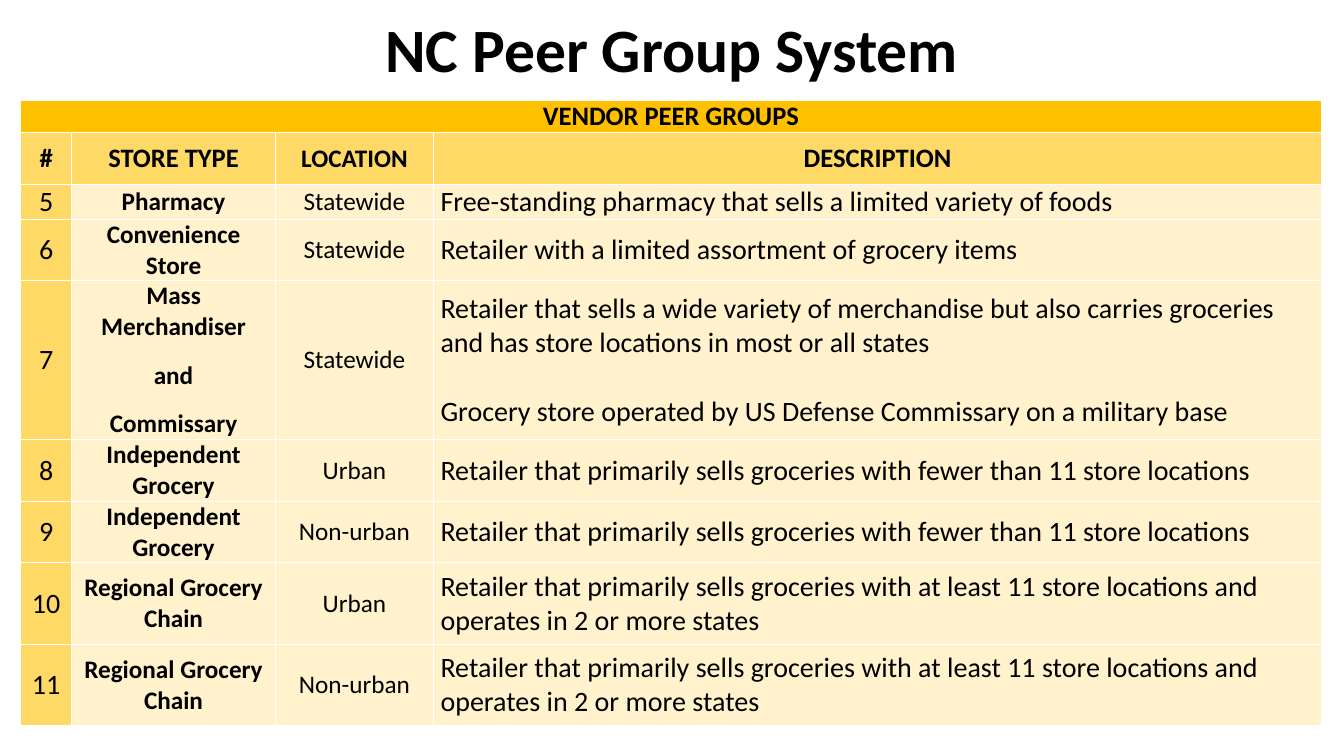
from typing import NamedTuple

from pptx import Presentation
from pptx.dml.color import RGBColor
from pptx.enum.text import MSO_ANCHOR, MSO_AUTO_SIZE, PP_ALIGN
from pptx.slide import Slide
from pptx.table import Table, _Cell
from pptx.text.text import TextFrame
from pptx.util import Pt

FONT = "Calibri"
BLACK = RGBColor(0x00, 0x00, 0x00)
GOLD = RGBColor(0xFF, 0xC0, 0x00)
AMBER = RGBColor(0xFF, 0xD9, 0x66)
CREAM = RGBColor(0xFF, 0xF2, 0xCC)

COLUMN_WIDTHS = (36.7, 145.4, 113, 634.4)
HEADER_HEIGHTS = (20.2, 37.4)


class CellStyle(NamedTuple):
    size: float
    bold: bool
    fill: RGBColor
    align: PP_ALIGN = PP_ALIGN.CENTER
    gap: float = 0  # space between paragraphs


class PeerGroup(NamedTuple):
    number: int
    store_type: str
    location: str
    description: str
    height: float


BANNER = CellStyle(19, True, GOLD)
HEADING = CellStyle(19, True, AMBER)
GROUP_STYLES = (
    CellStyle(20, False, AMBER),
    CellStyle(18, True, CREAM, gap=12.8),
    CellStyle(18, False, CREAM),
    CellStyle(20, False, CREAM, PP_ALIGN.LEFT, gap=24.4),
)
HEADINGS = (
    ("#", HEADING),
    ("STORE TYPE", HEADING),
    ("LOCATION", HEADING._replace(size=18)),
    ("DESCRIPTION", HEADING),
)

INDEPENDENT = "Retailer that primarily sells groceries with fewer than 11 store locations"
REGIONAL = ("Retailer that primarily sells groceries with at least 11 store locations "
            "and operates in 2 or more states")
MASS_MERCHANDISER = (
    "Retailer that sells a wide variety of merchandise but also carries groceries "
    "and has store locations in most or all states\n"
    "Grocery store operated by US Defense Commissary on a military base"
)
PEER_GROUPS = (
    PeerGroup(5, "Pharmacy", "Statewide",
              "Free-standing pharmacy that sells a limited variety of foods", 21.6),
    PeerGroup(6, "Convenience Store", "Statewide",
              "Retailer with a limited assortment of grocery items", 38.9),
    PeerGroup(7, "Mass Merchandiser\nand\nCommissary", "Statewide", MASS_MERCHANDISER, 108),
    PeerGroup(8, "Independent Grocery", "Urban", INDEPENDENT, 43.2),
    PeerGroup(9, "Independent Grocery", "Non-urban", INDEPENDENT, 43.2),
    PeerGroup(10, "Regional Grocery Chain", "Urban", REGIONAL, 58.3),
    PeerGroup(11, "Regional Grocery Chain", "Non-urban", REGIONAL, 58.3),
)


def write_text(frame: TextFrame, text: str, size: float, bold: bool,
               align: PP_ALIGN, gap: float = 0) -> None:
    frame.text = text
    for index, paragraph in enumerate(frame.paragraphs):
        paragraph.alignment = align
        if index:
            paragraph.space_before = Pt(gap)
        for span in paragraph.runs:
            span.font.name = FONT
            span.font.size = Pt(size)
            span.font.bold = bold
            span.font.color.rgb = BLACK


def fill_cell(cell: _Cell, text: str, style: CellStyle) -> None:
    cell.fill.solid()
    cell.fill.fore_color.rgb = style.fill
    cell.margin_left = cell.margin_right = Pt(5)
    cell.margin_top = cell.margin_bottom = Pt(0)
    cell.vertical_anchor = MSO_ANCHOR.MIDDLE
    write_text(cell.text_frame, text, style.size, style.bold, style.align, style.gap)


def add_title(slide: Slide) -> None:
    title = slide.shapes.title
    title.left, title.top, title.width, title.height = Pt(195), Pt(8.6), Pt(570), Pt(57.6)
    frame = title.text_frame
    write_text(frame, "NC Peer Group System", 44, True, PP_ALIGN.CENTER)
    frame.auto_size = MSO_AUTO_SIZE.NONE
    frame.vertical_anchor = MSO_ANCHOR.MIDDLE
    frame.paragraphs[0].line_spacing = 0.9


def add_peer_table(slide: Slide) -> Table:
    heights = HEADER_HEIGHTS + tuple(group.height for group in PEER_GROUPS)
    table = slide.shapes.add_table(
        len(heights), len(COLUMN_WIDTHS), Pt(14.6), Pt(71.6),
        Pt(sum(COLUMN_WIDTHS)), Pt(sum(heights))).table
    table.first_row = table.horz_banding = False
    for column, width in zip(table.columns, COLUMN_WIDTHS):
        column.width = Pt(width)
    for row, height in zip(table.rows, heights):
        row.height = Pt(height)

    # Banner and column headings
    banner = table.cell(0, 0)
    banner.merge(table.cell(0, len(COLUMN_WIDTHS) - 1))
    fill_cell(banner, "VENDOR PEER GROUPS", BANNER)
    for column_index, (text, style) in enumerate(HEADINGS):
        fill_cell(table.cell(1, column_index), text, style)

    # One row per peer group
    for row_index, group in enumerate(PEER_GROUPS, start=len(HEADER_HEIGHTS)):
        texts = (str(group.number), group.store_type, group.location, group.description)
        for column_index, (text, style) in enumerate(zip(texts, GROUP_STYLES)):
            fill_cell(table.cell(row_index, column_index), text, style)
    return table


def main() -> None:
    deck = Presentation()
    deck.slide_width, deck.slide_height = Pt(960), Pt(540)
    page = deck.slides.add_slide(deck.slide_layouts[5])
    add_title(page)
    add_peer_table(page)
    deck.save("out.pptx")


if __name__ == "__main__":
    main()
